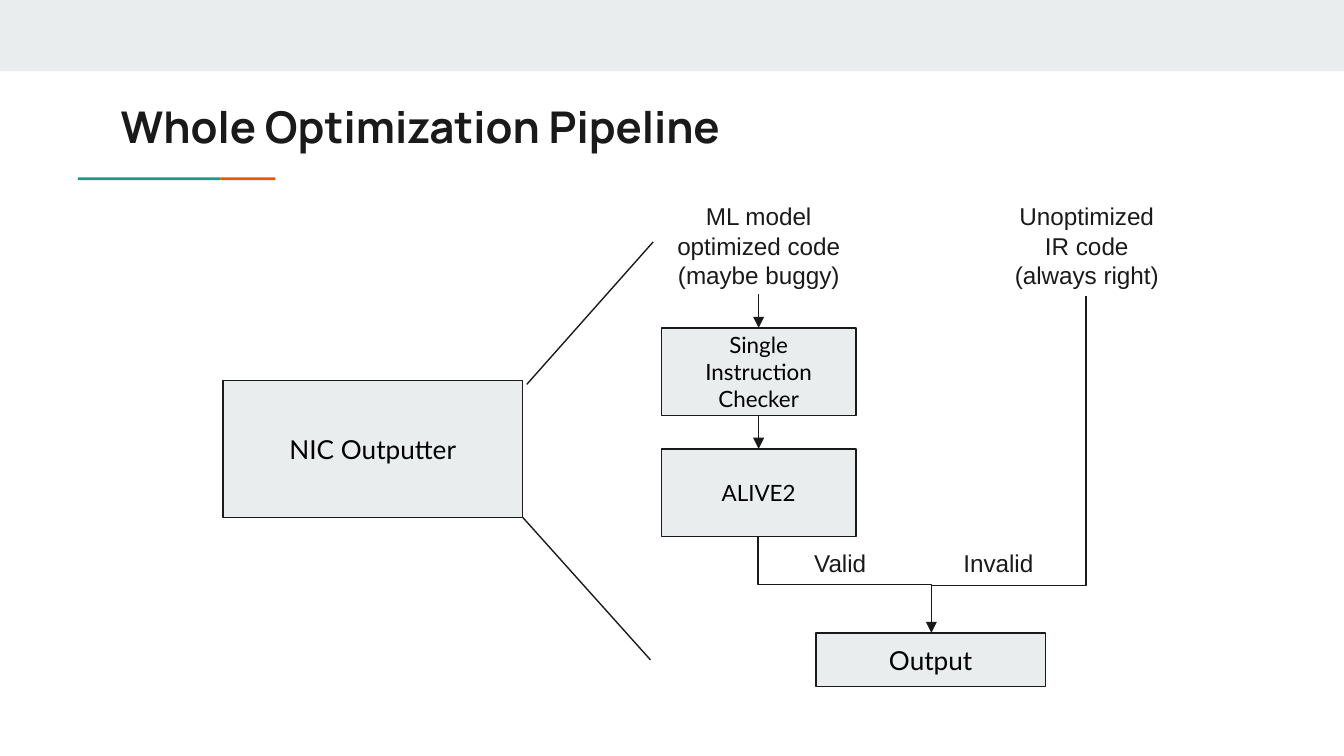
from lxml.etree import SubElement
from pptx import Presentation
from pptx.dml.color import RGBColor
from pptx.enum.shapes import MSO_CONNECTOR as Connector, MSO_SHAPE as Shape
from pptx.enum.text import MSO_ANCHOR as Anchor, PP_ALIGN as Align
from pptx.oxml.ns import qn
from pptx.util import Inches, Pt

INK = RGBColor(0x1A, 0x1A, 0x1A)
BLACK = RGBColor(0x00, 0x00, 0x00)
MIST = RGBColor(0xE9, 0xED, 0xEE)
TEAL = RGBColor(0x1A, 0x99, 0x88)
ORANGE = RGBColor(0xEB, 0x56, 0x00)

TOP, BOTTOM = 0, 2  # connection sites of a rectangle


def write_text(shape, text, size=13, font="Arial", color=INK, bold=False,
               align=Align.CENTER, anchor=Anchor.TOP):
    frame = shape.text_frame
    frame.word_wrap = True
    frame.vertical_anchor = anchor
    frame.margin_left = frame.margin_right = Inches(0.1)
    frame.margin_top = frame.margin_bottom = Inches(0.1)
    frame.text = text
    for paragraph in frame.paragraphs:
        paragraph.alignment = align
        paragraph.font.size = Pt(size)
        paragraph.font.name = font
        paragraph.font.bold = bold
        paragraph.font.color.rgb = color


def add_label(slide, text, left, top, width, height, **text_format):
    label = slide.shapes.add_textbox(
        Inches(left), Inches(top), Inches(width), Inches(height))
    write_text(label, text, **text_format)
    return label


def add_block(slide, left, top, width, height, fill):
    block = slide.shapes.add_shape(
        Shape.RECTANGLE, Inches(left), Inches(top), Inches(width), Inches(height))
    block.shadow.inherit = False
    block.fill.solid()
    block.fill.fore_color.rgb = fill
    block.line.fill.background()
    return block


def add_stage(slide, text, left, top, width, height, size=12):
    stage = add_block(slide, left, top, width, height, MIST)
    stage.line.color.rgb = INK
    stage.line.width = Pt(0.75)
    write_text(stage, text, size=size, font="Lato", color=BLACK,
               anchor=Anchor.MIDDLE)
    return stage


def add_line(slide, start, end, kind=Connector.STRAIGHT, arrow=False):
    line = slide.shapes.add_connector(
        kind, *(Inches(value) for value in (*start, *end)))
    line.line.color.rgb = INK
    line.line.width = Pt(0.75)
    properties = line._element.spPr
    SubElement(properties, qn("a:effectLst"))
    if arrow:
        SubElement(properties.find(qn("a:ln")), qn("a:tailEnd"), type="triangle")
    return line


def add_arrow_down(slide, upper, lower):
    arrow = add_line(slide, (0, 0), (1, 1), arrow=True)
    arrow.begin_connect(upper, BOTTOM)
    arrow.end_connect(lower, TOP)


def add_elbow_down(slide, start, end, bend, arrow=False):
    """Run down, across and down again; bend is the share of the drop before the turn."""
    (x1, y1), (x2, y2) = start, end
    drop, shift = y2 - y1, abs(x2 - x1)
    left, top = (x1 + x2 - drop) / 2, (y1 + y2 - shift) / 2
    elbow = add_line(slide, (left, top), (left + drop, top + shift),
                     Connector.ELBOW, arrow)
    properties = elbow._element.spPr
    transform = properties.find(qn("a:xfrm"))
    if x2 > x1:
        transform.set("rot", str(270 * 60000))
        transform.set("flipH", "1")
    else:
        transform.set("rot", str(90 * 60000))
    adjustments = properties.find(qn("a:prstGeom")).get_or_add_avLst()
    SubElement(adjustments, qn("a:gd"), name="adj1",
               fmla=f"val {round(bend * 100000)}")


def add_header(slide, left, top, width):
    add_block(slide, left, top, width, 0.53, MIST)
    add_label(slide, "Whole Optimization Pipeline", left + 0.8, top + 0.64, 8.41, 0.59,
              size=23.4, font="Manrope", bold=True, align=Align.LEFT)
    add_block(slide, left + 0.58, top + 1.32, 1.06, 0.02, TEAL)
    add_block(slide, left + 1.64, top + 1.32, 0.41, 0.02, ORANGE)


def add_outputter(slide, left, top, width, height):
    """Place the overview stage and the two lines that open it into detail."""
    add_stage(slide, "NIC Outputter", left, top, width, height, size=14)
    right, bottom = left + width, top + height
    add_line(slide, (right + 0.03, top + 0.03), (right + 0.97, top - 1.03))
    add_line(slide, (right, bottom), (right + 0.95, bottom + 1.06))


def add_detail(slide, left, top):
    """Place the checks, from both kinds of code down to the output."""
    stage_left, stage_width, stage_height = left + 0.06, 1.45, 0.65
    optimized = add_label(slide, "ML model optimized code\n(maybe buggy)",
                          left, top, 1.57, 0.79)
    add_label(slide, "Unoptimized IR code\n(always right)",
              left + 2.53, top, 1.39, 0.79)
    previous = optimized
    for row, name in enumerate(("Single Instruction\nChecker", "ALIVE2")):
        stage = add_stage(slide, name, stage_left, top + 1.04 + 0.9 * row,
                          stage_width, stage_height)
        add_arrow_down(slide, previous, stage)
        previous = stage

    add_stage(slide, "Output", left + 1.21, top + 3.31, 1.71, 0.4, size=14)
    output_top = (left + 2.07, top + 3.31)
    add_elbow_down(slide, (left + 0.78, top + 2.59), output_top, 0.5)
    add_elbow_down(slide, (left + 3.22, top + 0.8), output_top, 0.86, arrow=True)
    add_label(slide, "Valid", left + 1.1, top + 2.58, 0.64, 0.4, align=Align.LEFT)
    add_label(slide, "Invalid", left + 2.21, top + 2.58, 0.87, 0.33, align=Align.LEFT)


def main():
    presentation = Presentation()
    presentation.slide_width = Inches(10)
    presentation.slide_height = Inches(10 * 9 / 16)
    slide = presentation.slides.add_slide(presentation.slide_layouts[6])
    add_header(slide, 0, 0, 10)
    add_outputter(slide, 1.66, 2.83, 2.23, 1.02)
    add_detail(slide, 4.86, 1.4)
    presentation.save("out.pptx")


if __name__ == "__main__":
    main()
